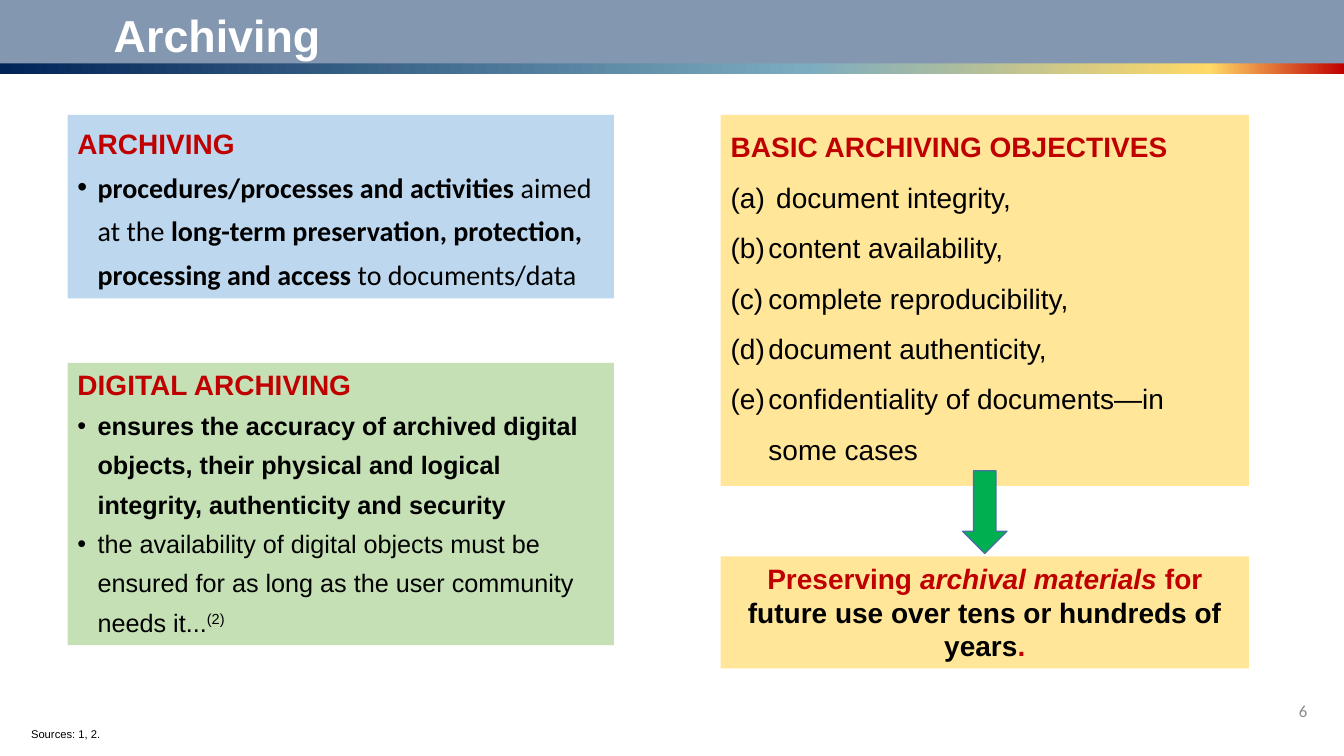
from lxml.etree import SubElement
from pptx import Presentation
from pptx.dml.color import RGBColor
from pptx.enum.shapes import MSO_SHAPE as Shape
from pptx.enum.text import MSO_ANCHOR as Anchor, PP_ALIGN as Align
from pptx.oxml.ns import qn
from pptx.util import Pt

RED, BLACK, WHITE = "C00000", "000000", "FFFFFF"
BLUE, YELLOW, GREEN = "BDD7EE", "FFE699", "C5E0B4"
LEFT_X, LEFT_WIDTH = 48.24, 390.24
RIGHT_X, RIGHT_WIDTH = 514.8, 377.28
PANEL_TOP = 82.08


def color(hex_code):
    return RGBColor.from_string(hex_code)


def add_block(slide, box, fill, preset=Shape.RECTANGLE):
    """Add a borderless, shadowless shape with top-anchored text."""
    block = slide.shapes.add_shape(preset, *map(Pt, box))
    block.shadow.inherit = False
    block.fill.solid()
    block.fill.fore_color.rgb = color(fill)
    block.line.fill.background()
    block.text_frame.word_wrap = True
    block.text_frame.vertical_anchor = Anchor.TOP
    return block


def add_label(slide, box):
    frame = slide.shapes.add_textbox(*map(Pt, box)).text_frame
    frame.word_wrap = True
    return frame


def add_run(paragraph, text, size=20, hex_code=BLACK, bold=False,
            italic=False, font="Arial"):
    run = paragraph.add_run()
    run.text = text
    run.font.name, run.font.size = font, Pt(size)
    run.font.bold, run.font.italic = bold, italic
    run.font.color.rgb = color(hex_code)
    return run


def set_indent(paragraph, margin, first_line=0):
    properties = paragraph._p.get_or_add_pPr()
    properties.set("marL", str(Pt(margin)))
    properties.set("indent", str(Pt(first_line)))
    return properties


def add_item(frame, spacing, hang, numbered=False):
    """Add a paragraph with a hanging bullet or an (a), (b), (c) number."""
    item = frame.add_paragraph()
    item.alignment = Align.LEFT
    item.line_spacing = spacing
    properties = set_indent(item, hang, -hang)
    SubElement(properties, qn("a:buFont"), typeface="Arial")
    if numbered:
        SubElement(properties, qn("a:buAutoNum"), type="alphaLcParenBoth")
    else:
        SubElement(properties, qn("a:buChar"), char="•")
    return item


def add_panel(slide, box, fill, heading, spacing):
    """Add a coloured panel with a red heading and return its text frame."""
    frame = add_block(slide, box, fill).text_frame
    first = frame.paragraphs[0]
    first.alignment = Align.LEFT
    first.line_spacing = spacing
    add_run(first, heading, hex_code=RED, bold=True)
    return frame


def add_header(slide, box):
    left, top, width, height = box
    stripe = add_block(slide, (left, top + 36.72, width, 16.56), WHITE)
    stripe.fill.gradient()
    stripe.fill.gradient_angle = 0
    stops = stripe._element.spPr.find(qn("a:gradFill")).find(qn("a:gsLst"))
    stops.clear()
    for percent, hex_code in ((0, "012457"), (60, "7CACC0"),
                              (90, "FFD966"), (100, RED)):
        stop = SubElement(stops, qn("a:gs"), pos=str(percent * 1000))
        SubElement(stop, qn("a:srgbClr"), val=hex_code)

    add_block(slide, (left, top, width, height), "8497B0")
    title = add_label(slide, (left + 2.16, top + 2.16, 519, 46)).paragraphs[0]
    set_indent(title, 72)
    add_run(title, "Archiving", 32, WHITE, bold=True)


def add_archiving(slide, box):
    frame = add_panel(slide, box, BLUE, "ARCHIVING", 1.2)
    definition = add_item(frame, 1.3, 14.4)
    for text, bold in (
            ("procedures/processes and activities ", True),
            ("aimed at the ", False),
            ("long-term preservation, protection, processing and access ", True),
            ("to documents/data", False)):
        add_run(definition, text, bold=bold, font="Calibri")


def add_digital_archiving(slide, box):
    frame = add_panel(slide, box, GREEN, "DIGITAL ARCHIVING", 1.0)
    add_run(add_item(frame, 1.3, 14.4),
            "ensures the accuracy of archived digital objects, their physical "
            "and logical integrity, authenticity and security", 18, bold=True)
    availability = add_item(frame, 1.3, 14.4)
    add_run(availability, "the availability of digital objects must be ensured "
            "for as long as the user community needs it...", 18)
    citation = add_run(availability, "(2)", 18)
    citation.font._element.set("baseline", "30000")


def add_objectives(slide, box):
    frame = add_panel(slide, box, YELLOW, "BASIC ARCHIVING OBJECTIVES", 1.3)
    for objective in (" document integrity,", "content availability,",
                      "complete reproducibility,", "document authenticity,",
                      "confidentiality of documents—in some cases"):
        add_run(add_item(frame, 1.5, 27, numbered=True), objective)


def add_conclusion(slide, box):
    goal = add_block(slide, box, YELLOW).text_frame.paragraphs[0]
    goal.alignment = Align.CENTER
    for text, hex_code, italic in (
            ("Preserving ", RED, False),
            ("archival materials ", RED, True),
            ("for ", RED, False),
            ("future use over tens or hundreds of years", BLACK, False),
            (".", RED, False)):
        add_run(goal, text, hex_code=hex_code, bold=True, italic=italic)


def add_arrow(slide, box):
    arrow = add_block(slide, box, "00B050", Shape.DOWN_ARROW)
    arrow.line.color.rgb = color("43739E")
    arrow.line.width = Pt(1)


def add_footer(slide, box):
    left, top, width, height = box
    number_frame = add_label(slide, (left + width - 26.64, top, 26.64, 28.8))
    number_frame.vertical_anchor = Anchor.MIDDLE
    number = number_frame.paragraphs[0]
    number.alignment = Align.RIGHT
    add_run(number, "6", 12, "8C8C8C", font="Calibri")
    sources = add_label(slide, (left, top + height - 17.28, 97.92, 17.28))
    add_run(sources.paragraphs[0], "Sources: 1, 2.", 8)


def main():
    deck = Presentation()
    deck.slide_width, deck.slide_height = Pt(960), Pt(540)
    slide = deck.slides.add_slide(deck.slide_layouts[6])
    add_header(slide, (0, 0, 960, 45.36))
    add_archiving(slide, (LEFT_X, PANEL_TOP, LEFT_WIDTH, 131.04))
    add_objectives(slide, (RIGHT_X, PANEL_TOP, RIGHT_WIDTH, 264.96))
    add_conclusion(slide, (RIGHT_X, 397.44, RIGHT_WIDTH, 79.92))
    add_arrow(slide, (RIGHT_X + (RIGHT_WIDTH - 31.68) / 2, 336.24, 31.68, 59.04))
    add_digital_archiving(slide, (LEFT_X, 259.2, LEFT_WIDTH, 201.6))
    add_footer(slide, (15.12, 493.2, 925.92, 40.32))
    deck.save("out.pptx")


if __name__ == "__main__":
    main()
